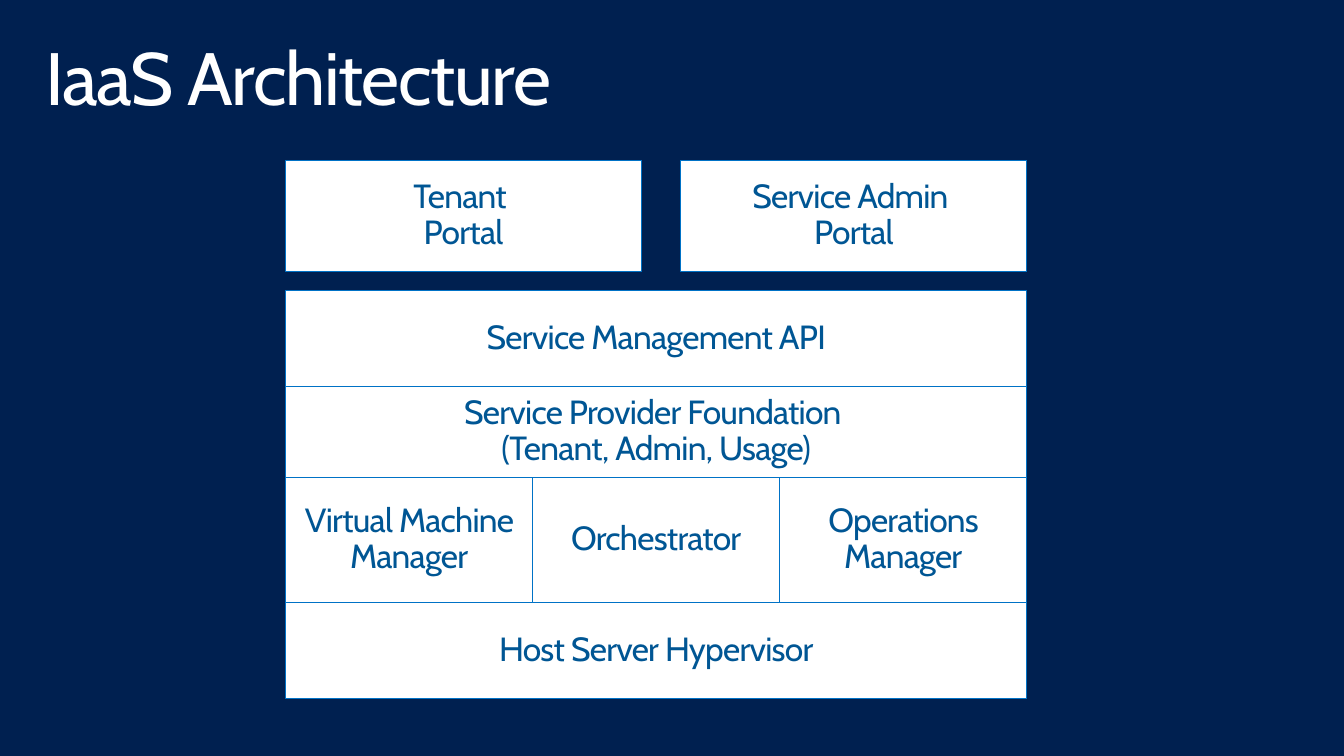
"""Build the IaaS architecture slide as stacked service layers."""
from dataclasses import dataclass

from pptx import Presentation
from pptx.dml.color import RGBColor as RGB
from pptx.enum.shapes import MSO_SHAPE as SHAPE
from pptx.enum.text import MSO_ANCHOR as ANCHOR, PP_ALIGN as ALIGN
from pptx.util import Inches, Pt

COLORS = {"navy": "002050", "white": "FFFFFF", "line": "0072C6", "text": "005694"}
LEFT, WIDTH = 2.89, 7.5
THIRD = WIDTH / 3


@dataclass(frozen=True)
class Style:
    size: float
    color: str
    spacing: int
    align: ALIGN
    anchor: ANCHOR
    inset_x: float
    inset_y: float


@dataclass(frozen=True)
class Block:
    lines: tuple[str, ...]
    left: float
    top: float
    width: float
    height: float


TITLE_STYLE = Style(54, "white", -100, ALIGN.LEFT, ANCHOR.TOP, 0.16, 0.1)
BLOCK_STYLE = Style(24.4, "text", -50, ALIGN.CENTER, ANCHOR.MIDDLE, 0.1, 0.05)

TITLE = Block(("IaaS Architecture",), 0.3, 0.32, 13, 1)
PORTALS = [
    Block(("Service Admin ", "Portal"), 6.89, 1.62, 3.5, 1.13),
    Block(("Tenant ", "Portal"), LEFT, 1.62, 3.6, 1.13),
]
LAYERS = [
    Block(("Service Management API",), LEFT, 2.94, WIDTH, 0.97),
    Block(("Service Provider Foundation ", "(Tenant, Admin, Usage)"), LEFT, 3.91, WIDTH, 0.92),
    Block(("Host Server Hypervisor",), LEFT, 6.1, WIDTH, 0.97),
]
MANAGERS = [
    Block((name,), LEFT + i * THIRD, 4.83, THIRD, 1.27)
    for i, name in enumerate(("Virtual Machine Manager", "Orchestrator", "Operations Manager"))
]


def rgb(name: str) -> RGB:
    return RGB.from_string(COLORS[name])


def apply(obj, formats: dict) -> None:
    for name, value in formats.items():
        setattr(obj, name, value)


def place(block: Block) -> list[int]:
    return [Inches(v) for v in (block.left, block.top, block.width, block.height)]


def write(tf, lines: tuple[str, ...], style: Style) -> None:
    inset_x, inset_y = Inches(style.inset_x), Inches(style.inset_y)
    apply(tf, {
        "word_wrap": True, "vertical_anchor": style.anchor,
        "margin_left": inset_x, "margin_right": inset_x,
        "margin_top": inset_y, "margin_bottom": inset_y,
    })
    for i, line in enumerate(lines):
        p = tf.add_paragraph() if i else tf.paragraphs[0]
        apply(p, {"alignment": style.align, "line_spacing": 0.9})
        r = p.add_run()
        r.text = line
        apply(r.font, {"name": "Cabin", "size": Pt(style.size)})
        r.font.color.rgb = rgb(style.color)
        r.font._element.set("spc", str(style.spacing))


def draw_block(s, block: Block) -> None:
    sp = s.shapes.add_shape(SHAPE.RECTANGLE, *place(block))
    sp.shadow.inherit = False
    sp.fill.solid()
    sp.fill.fore_color.rgb = rgb("white")
    sp.line.color.rgb = rgb("line")
    sp.line.width = Pt(0.75)
    write(sp.text_frame, block.lines, BLOCK_STYLE)


def main() -> None:
    prs = Presentation()
    apply(prs, {"slide_width": Inches(13.6), "slide_height": Inches(7.65)})
    s = prs.slides.add_slide(prs.slide_layouts[6])
    s.background.fill.solid()
    s.background.fill.fore_color.rgb = rgb("navy")
    write(s.shapes.add_textbox(*place(TITLE)).text_frame, TITLE.lines, TITLE_STYLE)
    for block in PORTALS + LAYERS + MANAGERS:
        draw_block(s, block)
    prs.save("out.pptx")


if __name__ == "__main__":
    main()
